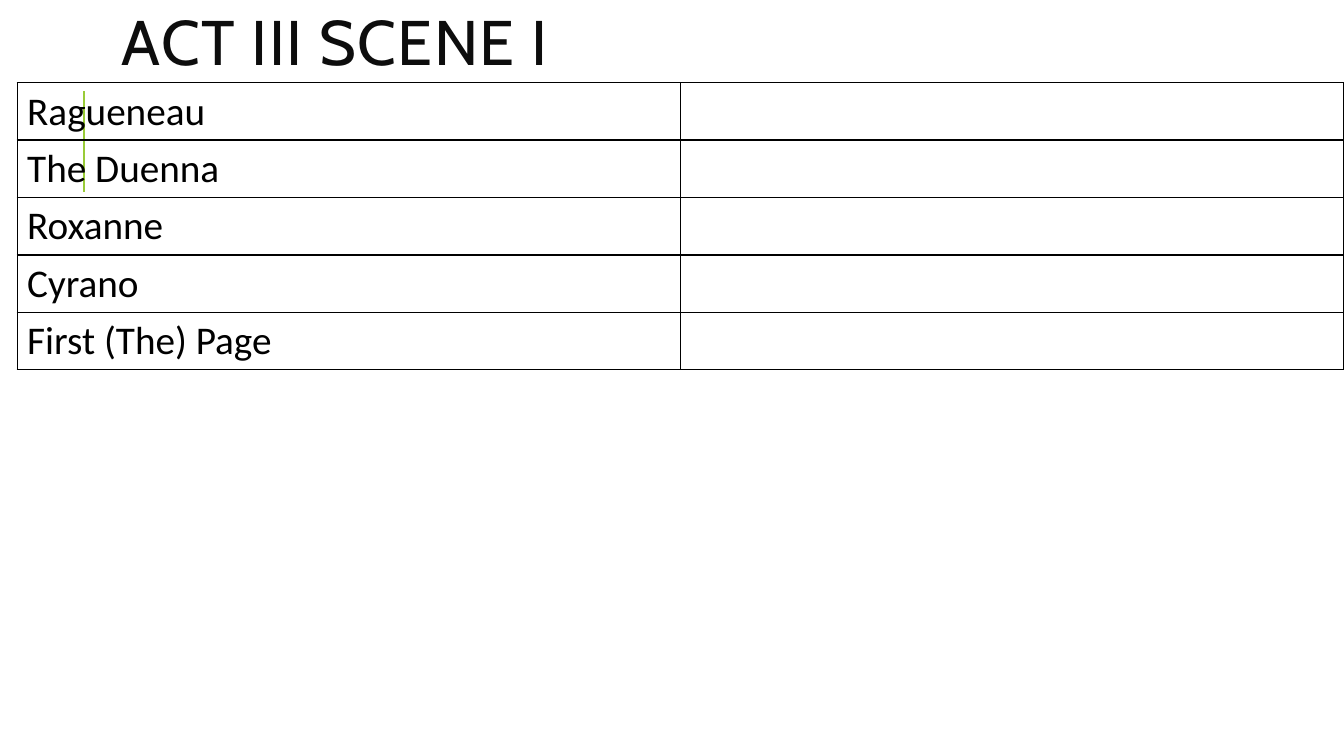
import pptx
import pptx.util
import pptx.dml.color
import pptx.enum.shapes
import pptx.enum.text
import pptx.oxml
import pptx.oxml.ns
import lxml.etree

Inches = pptx.util.Inches
Pt = pptx.util.Pt
ns = pptx.oxml.ns


def color(code):
    return pptx.dml.color.RGBColor.from_string(code)


def write(frame, text, size, font, code, space=None, track=0):
    """Fill a text frame with one run; track is letter spacing in points."""
    para = frame.paragraphs[0]
    para.line_spacing = space
    run = para.add_run()
    run.text = text
    run.font.size = Pt(size)
    run.font.name = font
    run.font.color.rgb = color(code)
    if track:
        run._r.get_or_add_rPr().set("spc", str(track * 100))


deck = pptx.Presentation()
deck.slide_width = Inches(13.33)
deck.slide_height = Inches(7.5)
slide = deck.slides.add_slide(deck.slide_layouts[6])

# Accent line
accent = slide.shapes.add_connector(
    pptx.enum.shapes.MSO_CONNECTOR.STRAIGHT,
    Inches(0.83), Inches(1.9), Inches(0.83), Inches(0.9))
accent.line.color.rgb = color("99CB38")
accent.line.width = Pt(1.5)
lxml.etree.SubElement(accent._element.spPr, ns.qn("a:effectLst"))

# Title
title = slide.shapes.add_textbox(Inches(1.11), Inches(0.12), Inches(10.63), Inches(0.7))
title.text_frame.word_wrap = True
title.text_frame.vertical_anchor = pptx.enum.text.MSO_ANCHOR.MIDDLE
write(title.text_frame, "ACT III SCENE I", 45, "Cabin", "0D0D0D", space=0.8, track=1)

# Cast table
cast = ["Ragueneau", "The Duenna", "Roxanne", "Cyrano", "First (The) Page"]
high = 0.57
table = slide.shapes.add_table(
    len(cast), 2, Inches(0.17), Inches(0.82), Inches(13.16), Inches(high * len(cast))).table
table.first_row = False
table.horz_banding = False
for col in table.columns:
    col.width = Inches(6.58)
for row, name in zip(table.rows, cast):
    row.height = Inches(high)
    write(row.cells[0].text_frame, name, 28, "Calibri", "000000")

for cell in table.iter_cells():
    cell.fill.background()
    props = cell._tc.get_or_add_tcPr()
    for spot, side in enumerate("LRTB"):
        edge = pptx.oxml.parse_xml(
            f'<a:ln{side} {ns.nsdecls("a")} w="{Pt(1)}"><a:solidFill>'
            f'<a:srgbClr val="000000"/></a:solidFill></a:ln{side}>')
        props.insert(spot, edge)

deck.save("out.pptx")
